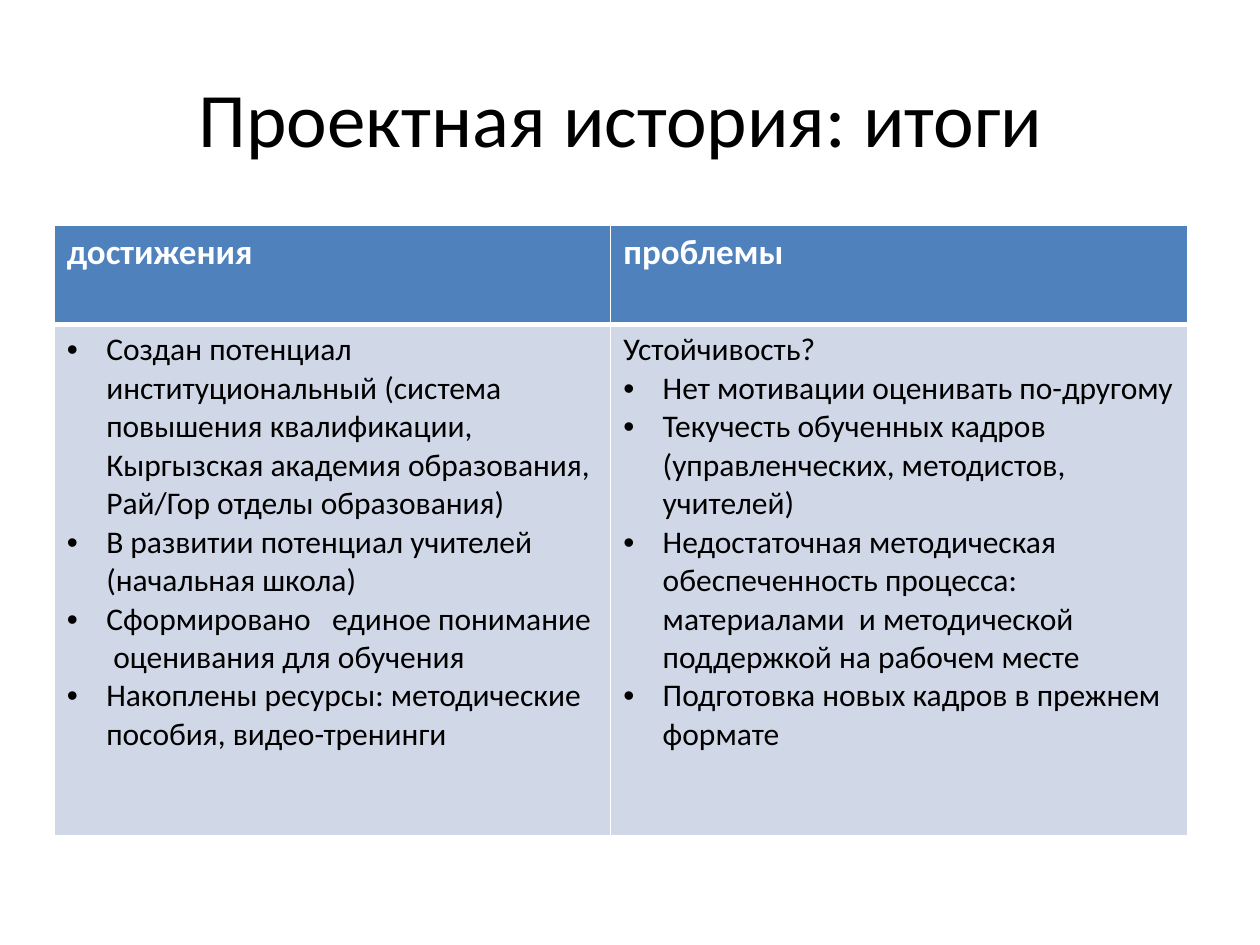
from dataclasses import dataclass

from lxml.etree import SubElement
from pptx import Presentation
from pptx.dml.color import RGBColor
from pptx.enum.text import MSO_ANCHOR, PP_ALIGN
from pptx.oxml.ns import qn
from pptx.util import Pt


@dataclass(frozen=True)
class Theme:
    font: str = "Calibri"
    text: str = "000000"
    light: str = "FFFFFF"
    header_fill: str = "4F81BD"
    body_fill: str = "D0D8E8"
    title_size: int = 44
    header_size: int = 20
    body_size: int = 18
    indent: float = 22.5
    thin: int = 1
    thick: int = 3


THEME = Theme()
TITLE = "Проектная история: итоги "
HEADERS = ["достижения", "проблемы"]
# Each paragraph: (text, has a bullet)
COLUMNS = [
    [
        ("Создан потенциал институциональный (система повышения квалификации, "
         "Кыргызская академия образования, Рай/Гор отделы образования)", True),
        ("В развитии потенциал учителей  (начальная школа)", True),
        ("Сформировано   единое понимание  оценивания для обучения", True),
        ("Накоплены ресурсы: методические  пособия, видео-тренинги", True),
    ],
    [
        ("Устойчивость?", False),
        ("Нет мотивации оценивать по-другому", True),
        ("Текучесть обученных кадров (управленческих, методистов, учителей)", True),
        ("Недостаточная методическая  обеспеченность процесса:  материалами  "
         "и методической поддержкой на рабочем месте", True),
        ("Подготовка новых кадров в прежнем формате", True),
    ],
]


def add_run(p, text, size, color, bold=False):
    r = p.add_run()
    r.text = text
    r.font.name = THEME.font
    r.font.size = Pt(size)
    r.font.bold = bold
    r.font.color.rgb = RGBColor.from_string(color)


def add_bullet(p):
    pPr = p._p.get_or_add_pPr()
    pPr.set("marL", str(Pt(THEME.indent)))
    pPr.set("indent", str(-Pt(THEME.indent)))
    SubElement(pPr, qn("a:buFont"), typeface="Arial")
    SubElement(pPr, qn("a:buChar"), char="•")


def set_borders(cell, top, bottom):
    tcPr = cell._tc.get_or_add_tcPr()
    widths = {"L": THEME.thin, "R": THEME.thin, "T": top, "B": bottom}
    for side, width in widths.items():
        ln = SubElement(tcPr, qn(f"a:ln{side}"), w=str(Pt(width)))
        fill = SubElement(ln, qn("a:solidFill"))
        SubElement(fill, qn("a:srgbClr"), val=THEME.light)


def fill_cell(cell, paragraphs, size, color, fill, bold=False):
    cell.fill.solid()
    cell.fill.fore_color.rgb = RGBColor.from_string(fill)
    tf = cell.text_frame
    for i, (text, bulleted) in enumerate(paragraphs):
        p = tf.add_paragraph() if i else tf.paragraphs[0]
        if bulleted:
            add_bullet(p)
        add_run(p, text, size, color, bold)


def add_title(slide):
    sp = slide.shapes.title
    sp.left, sp.top, sp.width, sp.height = Pt(36), Pt(21.6), Pt(648), Pt(90)
    tf = sp.text_frame
    tf.vertical_anchor = MSO_ANCHOR.MIDDLE
    p = tf.paragraphs[0]
    p.alignment = PP_ALIGN.CENTER
    add_run(p, TITLE, THEME.title_size, THEME.text)


def add_results_table(slide):
    widths, heights = [318, 330], [57, 292]
    table = slide.shapes.add_table(
        len(heights), len(widths), Pt(31), Pt(128.5),
        Pt(sum(widths)), Pt(sum(heights))).table
    for row, height in zip(table.rows, heights):
        row.height = Pt(height)
    for i, (header, items) in enumerate(zip(HEADERS, COLUMNS)):
        table.columns[i].width = Pt(widths[i])
        head, body = table.cell(0, i), table.cell(1, i)
        set_borders(head, THEME.thin, THEME.thick)
        set_borders(body, THEME.thick, THEME.thin)
        fill_cell(head, [(header, False)], THEME.header_size, THEME.light,
                  THEME.header_fill, bold=True)
        fill_cell(body, items, THEME.body_size, THEME.text, THEME.body_fill)


def main():
    prs = Presentation()
    prs.slide_width, prs.slide_height = Pt(720), Pt(540)
    slide = prs.slides.add_slide(prs.slide_layouts[5])  # Title Only
    # Heading
    add_title(slide)
    # Achievements and problems
    add_results_table(slide)
    prs.save("out.pptx")


if __name__ == "__main__":
    main()
